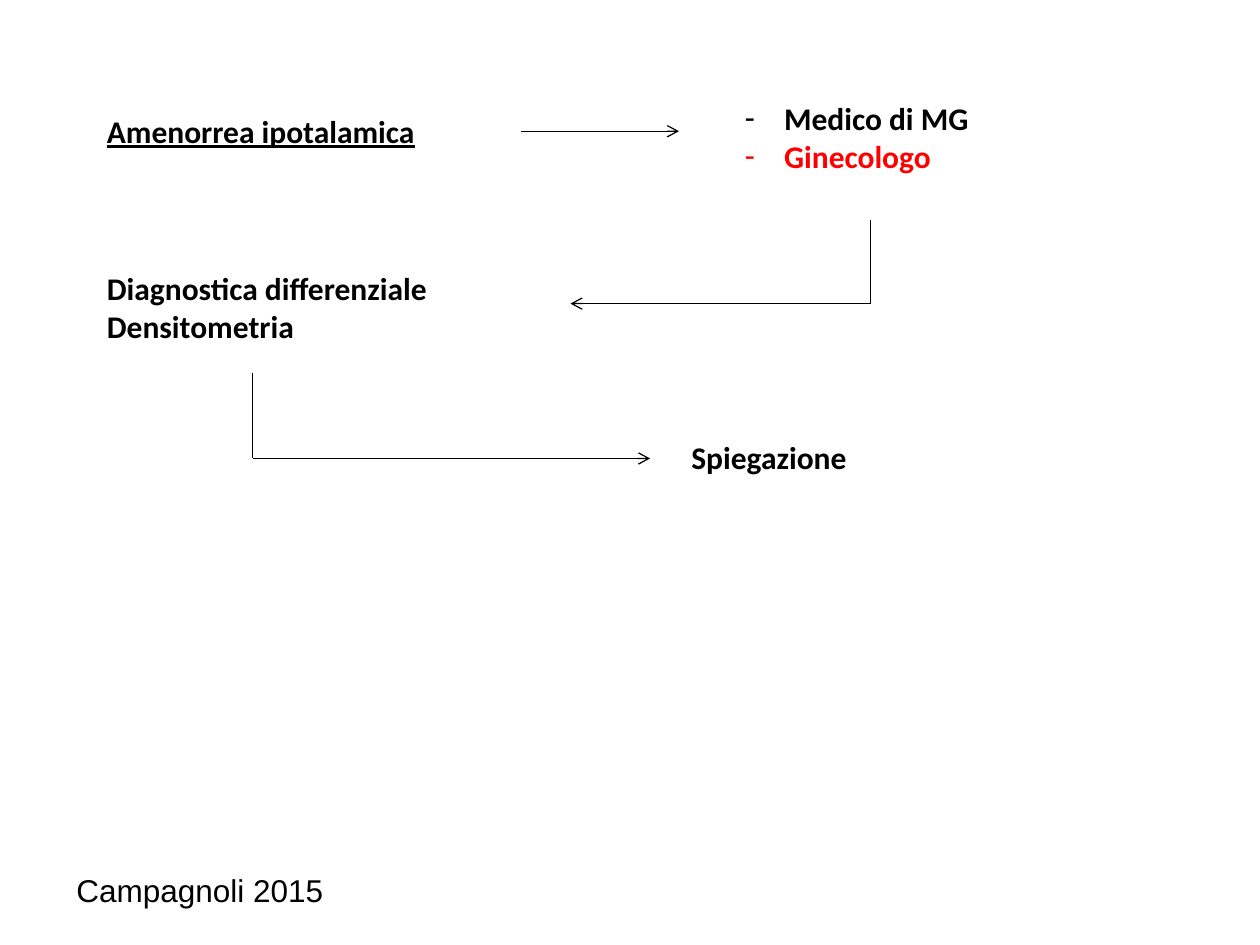
from dataclasses import dataclass

from lxml.etree import SubElement
from pptx import Presentation
from pptx.dml.color import RGBColor
from pptx.enum.shapes import MSO_CONNECTOR
from pptx.oxml.ns import qn
from pptx.util import Pt


@dataclass(frozen=True)
class Theme:
    ink: RGBColor = RGBColor(0, 0, 0)
    accent: RGBColor = RGBColor(255, 0, 0)
    heading_font: str = "Calibri"
    source_font: str = "Arial"
    text_size: float = 18
    line_width: float = 0.75
    indent: float = 22.5


THEME = Theme()


def add_text(page, left, top, width, height, lines, font=THEME.heading_font,
             bold=True, underline=False, dashed=False):
    box = page.shapes.add_textbox(Pt(left), Pt(top), Pt(width), Pt(height))
    frame = box.text_frame
    frame.word_wrap = True
    for index, (text, color) in enumerate(lines):
        para = frame.add_paragraph() if index else frame.paragraphs[0]
        span = para.add_run()
        span.text = text
        span.font.name = font
        span.font.size = Pt(THEME.text_size)
        span.font.bold = bold
        span.font.underline = underline
        span.font.color.rgb = color
        if dashed:
            add_dash(para)
    return box


def add_dash(para):
    properties = para._p.get_or_add_pPr()
    properties.set("marL", str(Pt(THEME.indent)))
    properties.set("indent", str(-Pt(THEME.indent)))
    SubElement(properties, qn("a:buFont"), typeface=THEME.source_font)
    SubElement(properties, qn("a:buChar"), char="-")


def add_line(page, start, end, arrow=False):
    line = page.shapes.add_connector(
        MSO_CONNECTOR.STRAIGHT, *(Pt(value) for value in (*start, *end)))
    line.line.color.rgb = THEME.ink
    line.line.width = Pt(THEME.line_width)
    if arrow:
        SubElement(line.line._get_or_add_ln(), qn("a:tailEnd"), type="arrow")
    SubElement(line._element.spPr, qn("a:effectLst"))
    return line


def add_elbow(page, start, end):
    corner = (start[0], end[1])
    stem = add_line(page, start, corner)
    add_line(page, corner, end, arrow=True)
    return stem


def main():
    deck = Presentation()
    deck.slide_width, deck.slide_height = Pt(720), Pt(540)
    page = deck.slides.add_slide(deck.slide_layouts[6])

    add_text(page, 54, 60.5, 215, 29, [("Amenorrea ipotalamica", THEME.ink)],
             underline=True)
    add_line(page, (297.5, 75), (388, 75), arrow=True)
    doctors = add_text(page, 418.5, 53, 158, 72.5,
                       [("Medico di MG", THEME.ink),
                        ("Ginecologo", THEME.accent)], dashed=True)
    stem = add_elbow(page, (497.5, 125.5), (326, 173.5))
    stem.begin_connect(doctors, 2)

    add_text(page, 54, 150, 204.5, 51,
             [("Diagnostica differenziale", THEME.ink),
              ("Densitometria", THEME.ink)])
    add_elbow(page, (144.5, 213), (371.5, 262))
    add_text(page, 388, 247, 143.5, 29, [("Spiegazione", THEME.ink)])

    add_text(page, 36.5, 494, 278, 29, [("Campagnoli 2015", THEME.ink)],
             font=THEME.source_font, bold=False)
    deck.save("out.pptx")


if __name__ == "__main__":
    main()
